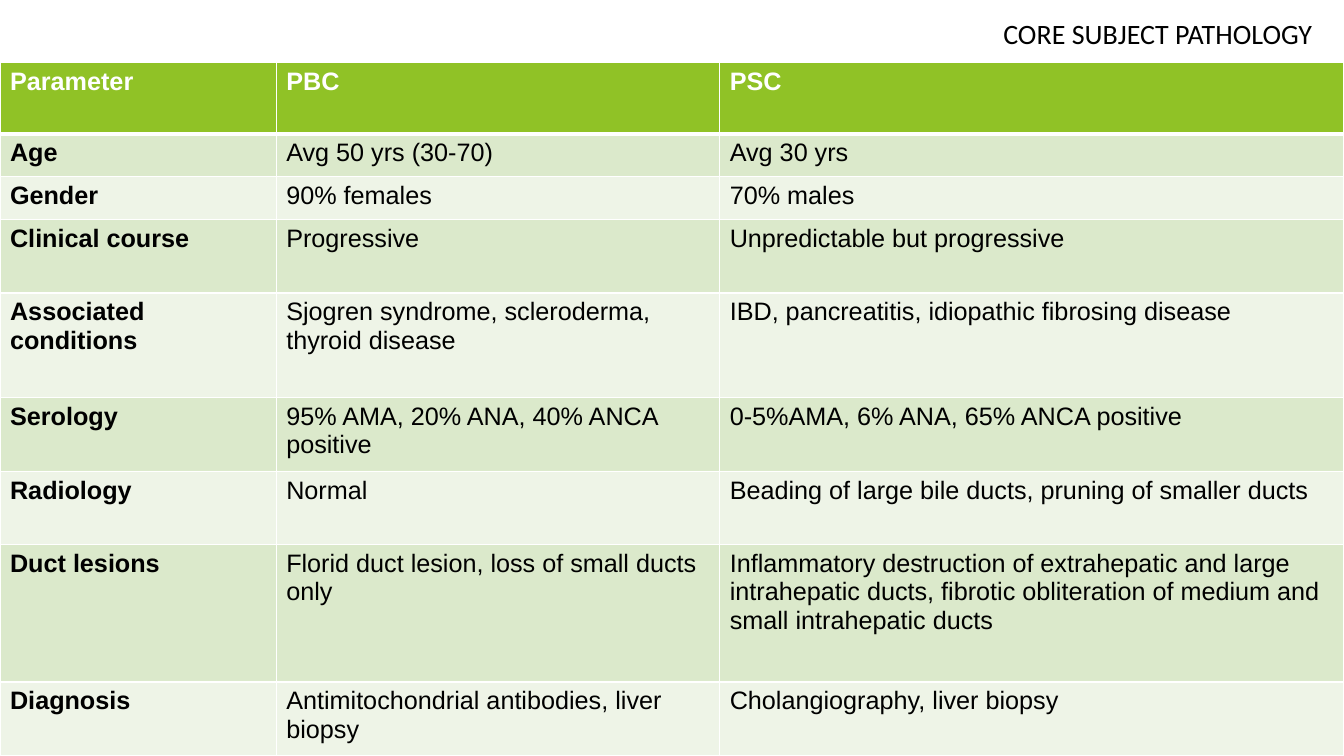
from lxml import etree
from pptx import Presentation
from pptx.dml.color import RGBColor
from pptx.enum.text import PP_ALIGN
from pptx.oxml.ns import qn
from pptx.util import Pt

RIGHT = PP_ALIGN.RIGHT
BLACK = RGBColor(0x00, 0x00, 0x00)
WHITE = RGBColor(0xFF, 0xFF, 0xFF)
GREEN = RGBColor(0x90, 0xC2, 0x26)
BAND_DARK = RGBColor(0xDB, 0xE9, 0xCB)
BAND_LIGHT = RGBColor(0xEE, 0xF4, 0xE7)

COL_WIDTHS = [197.3, 316.8, 445.7]
ROW_HEIGHTS = [51, 30.5, 30.5, 52.5, 75, 52.5, 52.5, 98, 52.5]
ROWS = [
    ("Parameter", "PBC", "PSC"),
    ("Age", "Avg 50 yrs (30-70)", "Avg 30 yrs"),
    ("Gender", "90% females", "70% males"),
    ("Clinical course", "Progressive", "Unpredictable but progressive"),
    ("Associated conditions", "Sjogren syndrome, scleroderma, thyroid disease",
     "IBD, pancreatitis, idiopathic fibrosing disease"),
    ("Serology", "95% AMA, 20% ANA, 40% ANCA positive",
     "0-5%AMA, 6% ANA, 65% ANCA positive"),
    ("Radiology", "Normal", "Beading of large bile ducts, pruning of smaller ducts"),
    ("Duct lesions", "Florid duct lesion, loss of small ducts only",
     "Inflammatory destruction of extrahepatic and large intrahepatic ducts, "
     "fibrotic obliteration of medium and small intrahepatic ducts"),
    ("Diagnosis", "Antimitochondrial antibodies, liver biopsy",
     "Cholangiography, liver biopsy"),
]


def add_run(p, text, size, font, color, bold=False):
    r = p.add_run()
    r.text = text
    r.font.size = Pt(size)
    r.font.name = font
    r.font.bold = bold
    r.font.color.rgb = color


def set_border(cell, side, width):
    ln = etree.SubElement(cell._tc.get_or_add_tcPr(), qn("a:" + side), w=str(Pt(width)))
    fill = etree.SubElement(ln, qn("a:solidFill"))
    etree.SubElement(fill, qn("a:srgbClr"), val=str(WHITE))


prs = Presentation()
prs.slide_width = Pt(960)
prs.slide_height = Pt(540)
s = prs.slides.add_slide(prs.slide_layouts[6])

# Subject heading
tf = s.shapes.add_textbox(Pt(631.4), Pt(10.8), Pt(306), Pt(25.2)).text_frame
tf.word_wrap = True
tf.margin_left = tf.margin_right = tf.margin_bottom = 0
tf.margin_top = Pt(1)
p = tf.paragraphs[0]
p.alignment = RIGHT
add_run(p, "CORE SUBJECT PATHOLOGY", 20, "Calibri", BLACK)

# Comparison table
table = s.shapes.add_table(len(ROWS), len(COL_WIDTHS), Pt(0), Pt(44.8),
                           Pt(sum(COL_WIDTHS)), Pt(sum(ROW_HEIGHTS))).table
for col, width in zip(table.columns, COL_WIDTHS):
    col.width = Pt(width)
for row, height in zip(table.rows, ROW_HEIGHTS):
    row.height = Pt(height)

for i, texts in enumerate(ROWS):
    header = i == 0
    band = GREEN if header else BAND_DARK if i % 2 else BAND_LIGHT
    for j, text in enumerate(texts):
        cell = table.cell(i, j)
        # Borders: a thicker line under the header row
        for side, width in (("lnL", 1), ("lnR", 1), ("lnT", 3 if i == 1 else 1),
                            ("lnB", 3 if header else 1)):
            set_border(cell, side, width)
        cell.fill.solid()
        cell.fill.fore_color.rgb = band
        add_run(cell.text_frame.paragraphs[0], text, 18, "Arial",
                WHITE if header else BLACK, header or j == 0)

prs.save("out.pptx")
